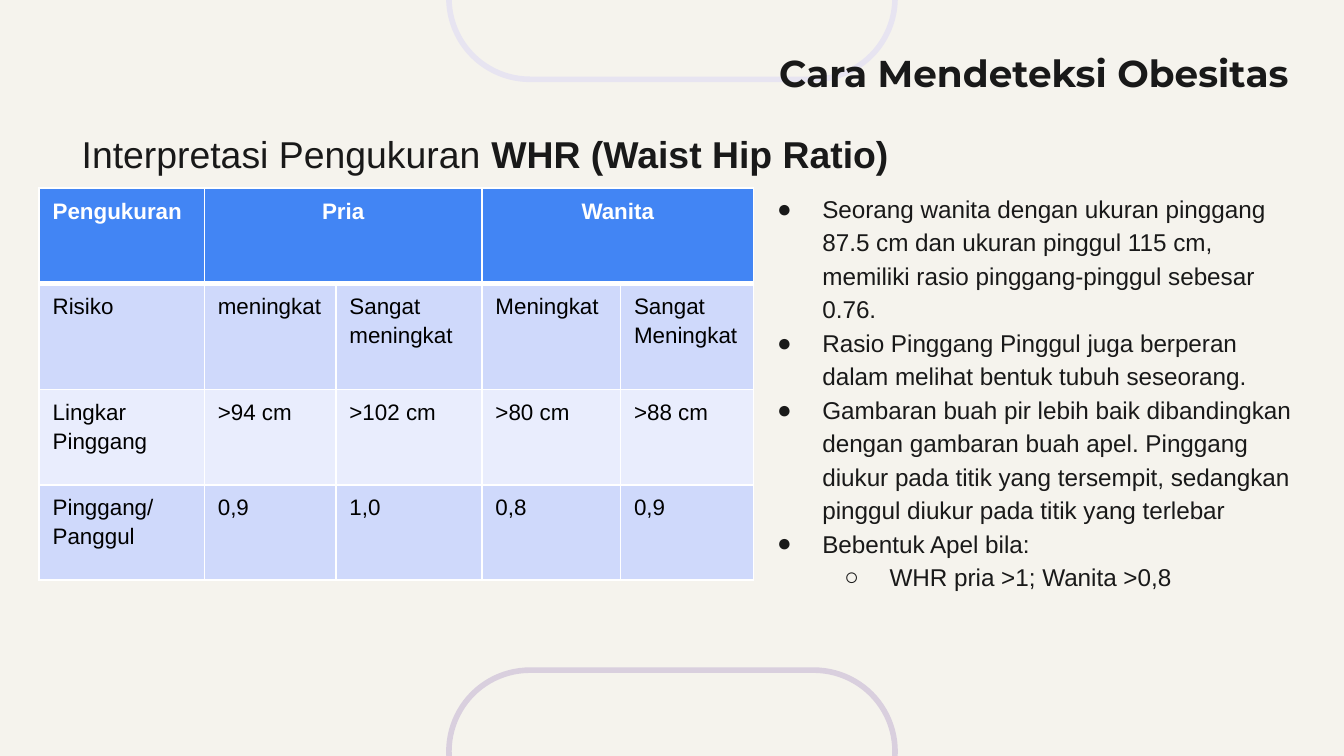
"""Build the slide on detecting obesity with the waist-hip ratio."""
from pptx import Presentation
from pptx.dml.color import RGBColor
from pptx.enum.shapes import MSO_SHAPE as Preset
from pptx.enum.text import MSO_ANCHOR as Anchor, PP_ALIGN as Align
from pptx.oxml import parse_xml
from pptx.oxml.ns import nsdecls
from pptx.util import Pt

COLORS = {
    "background": "F5F3ED", "ink": "191919", "black": "000000", "white": "FFFFFF",
    "top_frame": "E7E4F1", "bottom_frame": "D9CFDE",
    "header": "4285F4", "dark_band": "CFD9FB", "light_band": "E9EDFD",
}


def write(paragraph, text, size=12, color="ink", font="Arial", bold=False,
          align=Align.LEFT, line_spacing=1.0, space_after=0):
    paragraph.alignment = align
    paragraph.line_spacing = line_spacing
    paragraph.space_after = Pt(space_after)
    run = paragraph.add_run()
    run.text = text
    run.font.size = Pt(size)
    run.font.name = font
    run.font.bold = bold
    run.font.color.rgb = RGBColor.from_string(COLORS[color])


def add_text_frame(slide, left, top, width, height, anchor):
    frame = slide.shapes.add_textbox(Pt(left), Pt(top), Pt(width), Pt(height)).text_frame
    frame.word_wrap = True
    frame.vertical_anchor = anchor
    frame.margin_left = frame.margin_right = Pt(7.2)
    frame.margin_top = frame.margin_bottom = Pt(7.2)
    return frame


presentation = Presentation()
presentation.slide_width, presentation.slide_height = Pt(720), Pt(405)
slide = presentation.slides.add_slide(presentation.slide_layouts[6])
slide.background.fill.solid()
slide.background.fill.fore_color.rgb = RGBColor.from_string(COLORS["background"])

for top, color in [(-44.5, "top_frame"), (359, "bottom_frame")]:
    shape = slide.shapes.add_shape(Preset.ROUNDED_RECTANGLE, Pt(240.5), Pt(top), Pt(239), Pt(87))
    shape.adjustments[0] = 0.5
    shape.shadow.inherit = False
    shape.fill.background()
    shape.line.width = Pt(3)
    shape.line.color.rgb = RGBColor.from_string(COLORS[color])

subtitle = add_text_frame(slide, 36.7, 62, 593.3, 40.3, Anchor.MIDDLE).paragraphs[0]
write(subtitle, "Interpretasi Pengukuran ", size=20, space_after=16)
write(subtitle, "WHR (Waist Hip Ratio)", size=20, bold=True, space_after=16)

rows = [
    ["Pengukuran", "Pria", "", "Wanita", ""],
    ["Risiko", "meningkat", "Sangat meningkat", "Meningkat", "Sangat Meningkat"],
    ["Lingkar Pinggang", ">94 cm", ">102 cm", ">80 cm", ">88 cm"],
    ["Pinggang/\nPanggul", "0,9", "1,0", "0,8", "0,9"],
]
row_heights = [51, 57, 51, 51]
column_widths = [88.5, 70.5, 78.25, 74.25, 71.25]
row_fills = ["header", "dark_band", "light_band", "dark_band"]

table = slide.shapes.add_table(
    len(rows), len(column_widths), Pt(21), Pt(100.8),
    Pt(sum(column_widths)), Pt(sum(row_heights))).table
for column, width in zip(table.columns, column_widths):
    column.width = Pt(width)
for row, height in zip(table.rows, row_heights):
    row.height = Pt(height)
for first in (1, 3):
    table.cell(0, first).merge(table.cell(0, first + 1))

for row_index, texts in enumerate(rows):
    is_header = row_index == 0
    for column_index, text in enumerate(texts):
        cell = table.cell(row_index, column_index)
        cell.margin_left = cell.margin_right = Pt(7.2)
        cell.margin_top = cell.margin_bottom = Pt(3.6)
        thick_side = {0: "lnB", 1: "lnT"}.get(row_index)
        for side in ("lnL", "lnR", "lnT", "lnB"):
            border_width = Pt(3 if side == thick_side else 1)
            cell._tc.get_or_add_tcPr().append(parse_xml(
                f'<a:{side} {nsdecls("a")} w="{border_width}"><a:solidFill>'
                f'<a:srgbClr val="{COLORS["white"]}"/></a:solidFill></a:{side}>'))
        cell.fill.solid()
        cell.fill.fore_color.rgb = RGBColor.from_string(COLORS[row_fills[row_index]])
        if not text:
            continue
        for index, line in enumerate(text.split("\n")):
            frame = cell.text_frame
            paragraph = frame.add_paragraph() if index else frame.paragraphs[0]
            write(paragraph, line, color="white" if is_header else "black", bold=is_header,
                  align=Align.CENTER if is_header and column_index else Align.LEFT,
                  line_spacing=1.15)

notes = [
    (0, "Seorang wanita dengan ukuran pinggang 87.5 cm dan ukuran pinggul 115 cm, "
        "memiliki rasio pinggang-pinggul sebesar 0.76."),
    (0, "Rasio Pinggang Pinggul juga berperan dalam melihat bentuk tubuh seseorang."),
    (0, "Gambaran buah pir lebih baik dibandingkan dengan gambaran buah apel. Pinggang "
        "diukur pada titik yang tersempit, sedangkan pinggul diukur pada titik yang terlebar"),
    (0, "Bebentuk Apel bila:"),
    (1, "WHR pria >1; Wanita >0,8"),
]
notes_frame = add_text_frame(slide, 397.5, 94.5, 301.5, 216.5, Anchor.TOP)
for index, (level, text) in enumerate(notes):
    paragraph = notes_frame.add_paragraph() if index else notes_frame.paragraphs[0]
    paragraph.level = level
    write(paragraph, text, size=13, line_spacing=1.15)
    properties = paragraph._p.get_or_add_pPr()
    properties.set("marL", str(Pt(36 * (level + 1))))
    properties.set("indent", str(Pt(-24.25)))
    for bullet in (f'<a:buClr {nsdecls("a")}><a:srgbClr val="{COLORS["ink"]}"/></a:buClr>',
                   f'<a:buFont {nsdecls("a")} typeface="Arial"/>',
                   f'<a:buChar {nsdecls("a")} char="{"●○"[level]}"/>'):
        properties.append(parse_xml(bullet))

title = add_text_frame(slide, 380, 18.9, 317.5, 40.3, Anchor.MIDDLE).paragraphs[0]
write(title, "Cara Mendeteksi Obesitas", size=20, font="Montserrat", bold=True, align=Align.RIGHT)

presentation.save("out.pptx")
